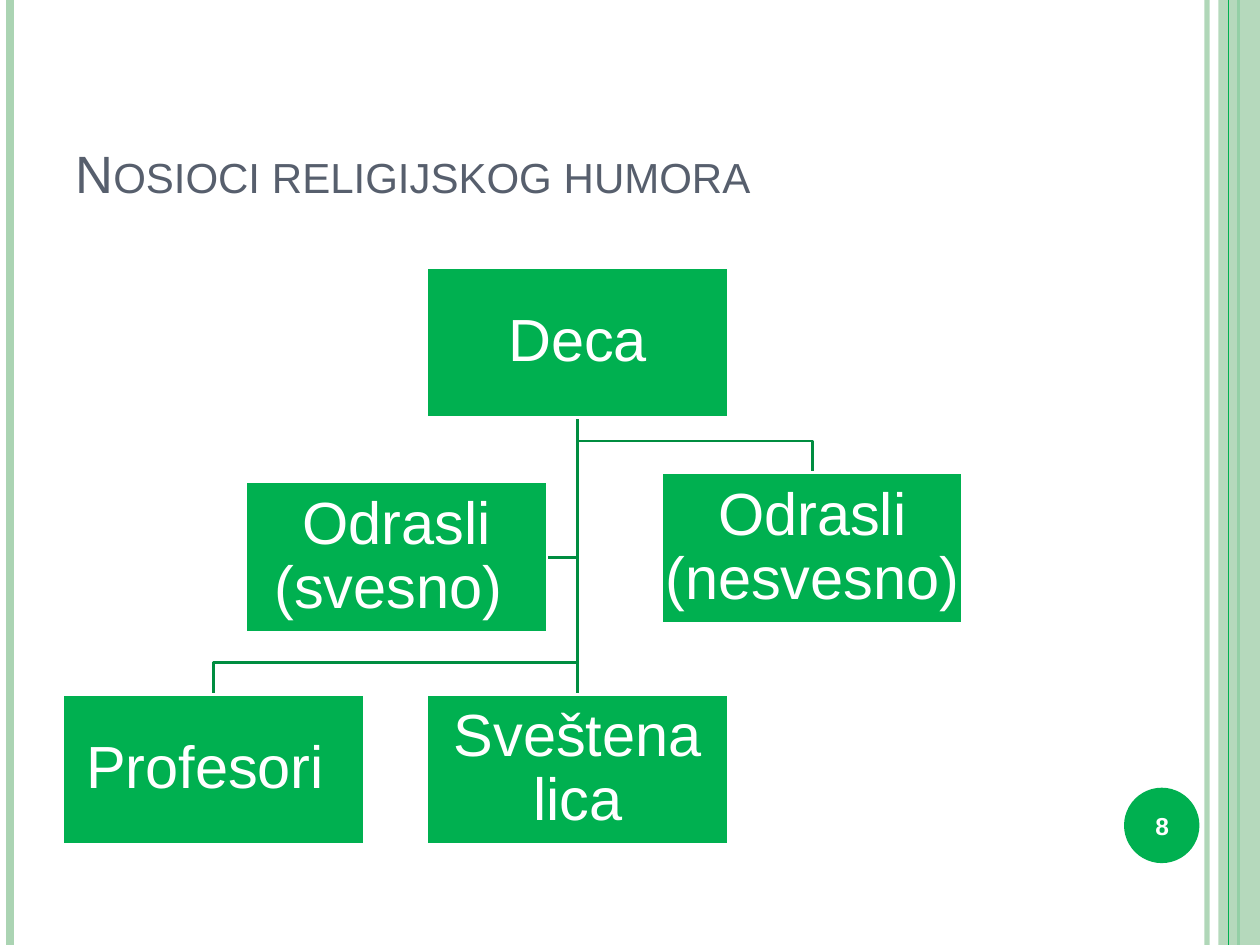
from lxml import etree
from pptx import Presentation
from pptx.dml.color import RGBColor
from pptx.enum.shapes import MSO_CONNECTOR, MSO_SHAPE
from pptx.enum.text import MSO_ANCHOR, PP_ALIGN
from pptx.oxml.ns import qn
from pptx.util import Cm, Pt

RECT, OVAL = MSO_SHAPE.RECTANGLE, MSO_SHAPE.OVAL
LINE = MSO_CONNECTOR.STRAIGHT
MID, LOW = MSO_ANCHOR.MIDDLE, MSO_ANCHOR.BOTTOM
LEFT, CENTER = PP_ALIGN.LEFT, PP_ALIGN.CENTER
HUES = {"green": "00B050", "dark": "008D40", "pale": "ABD4B3",
        "slate": "575F6D", "white": "FFFFFF"}
FONT = "Arial"
WIDE, HIGH = 25.4, 19.05


def hue(name):
    return RGBColor.from_string(HUES[name])


def fade(fill, part):
    tone = fill.find(".//" + qn("a:srgbClr"))
    etree.SubElement(tone, qn("a:alpha")).set("val", str(part * 1000))


def add_line(slide, start, end, color, width):
    line = slide.shapes.add_connector(LINE, *map(Cm, start + end))
    line.line.color.rgb = hue(color)
    line.line.width = Pt(width)
    etree.SubElement(line._element.spPr, qn("a:effectLst"))
    return line


def add_shape(slide, kind, box, color):
    shape = slide.shapes.add_shape(kind, *map(Cm, box))
    shape.shadow.inherit = False
    shape.fill.solid()
    shape.fill.fore_color.rgb = hue(color)
    shape.line.fill.background()
    return shape


def write(shape, text, size, color, align, anchor, pad=(0.25, 0.13)):
    frame = shape.text_frame
    frame.word_wrap = True
    frame.vertical_anchor = anchor
    frame.margin_left = frame.margin_right = Cm(pad[0])
    frame.margin_top = frame.margin_bottom = Cm(pad[1])
    para = frame.paragraphs[0]
    para.alignment = align
    for i, part in enumerate(text.split("\n")):
        if i:
            para.add_line_break()
        run = para.add_run()
        run.text = part
        run.font.name = FONT
        run.font.size = Pt(size)
        run.font.color.rgb = hue(color)
    return para


def draw_frame(slide, box):
    left, top, width, height = box
    rules = [(24.33, "pale", 3), (0.2, "pale", 4.5), (24.97, "green", 1.5)]
    for x, color, size in rules:
        rule = add_line(slide, (left + x, top), (left + x, top + height),
                        color, size)
        if size == 3:
            fade(rule._element.spPr, 93)
    band = add_shape(slide, RECT, (left + 24.56, top, width - 24.56, height),
                     "pale")
    fade(band._element.spPr, 87)
    add_line(slide, (left + 24.77, top), (left + 24.77, top + height),
             "green", 0.75)


def draw_title(slide, box):
    title = slide.shapes.add_textbox(*map(Cm, box))
    para = write(title, "Nosioci religijskog humora", 30, "slate", LEFT, LOW)
    para.runs[0]._r.get_or_add_rPr().set("cap", "small")


def draw_elbow(slide, points):
    first, *rest = [(Cm(x), Cm(y)) for x, y in points]
    path = slide.shapes.build_freeform(*first)
    path.add_line_segments(rest, close=False)
    elbow = path.convert_to_shape()
    elbow.shadow.inherit = False
    elbow.fill.background()
    elbow.line.color.rgb = hue("dark")
    elbow.line.width = Pt(1.5)


def draw_tree(slide, box):
    left, top, width, height = box
    wide, tall, gap = 6.07, 3.03, 1.27
    mid = left + wide + gap
    low = top + height - tall
    stem, foot = mid + wide / 2, top + tall
    side = left + width - wide
    lift = 0.64
    nodes = [
        ("Deca", mid, top),
        ("Profesori ", left, low),
        ("Sveštena lica", mid, low),
        ("Odrasli\n(nesvesno)", side, top + 4.14),
        ("Odrasli\n(svesno) ", left + 3.69, top + 4.33),
    ]

    arm = nodes[4][2] + tall / 2
    draw_elbow(slide, [(stem, foot), (stem, arm), (nodes[4][1] + wide, arm)])
    for text, x, y in (nodes[3], nodes[1]):
        end = x + wide / 2
        draw_elbow(slide, [(stem, foot), (stem, y - lift),
                           (end, y - lift), (end, y)])
    trunk = add_line(slide, (stem, foot), (stem, low), "dark", 1.5)

    cards = []
    for text, x, y in nodes:
        card = add_shape(slide, RECT, (x, y, wide, tall), "green")
        card.line.color.rgb = hue("white")
        card.line.width = Pt(1.5)
        para = write(card, text, 34, "white", CENTER, MID, (0.06, 0.06))
        para.line_spacing = 0.9
        cards.append(card)
    trunk.begin_connect(cards[0], 2)
    trunk.end_connect(cards[2], 0)


def draw_badge(slide, box):
    left, top, size, _ = box
    add_shape(slide, OVAL, box, "green")
    label = slide.shapes.add_textbox(Cm(left - 0.08), Cm(top + 0.05),
                                     Cm(size + 0.18), Cm(1.45))
    para = write(label, "8", 14, "white", CENTER, MID)
    para.runs[0].font.bold = True


def main():
    deck = Presentation()
    deck.slide_width, deck.slide_height = Cm(WIDE), Cm(HIGH)
    slide = deck.slides.add_slide(deck.slide_layouts[6])
    draw_frame(slide, (0, 0, WIDE, HIGH))
    draw_title(slide, (1.27, 1.07, 20.75, 3.18))
    draw_tree(slide, (1.27, 5.39, 18.14, 11.64))
    draw_badge(slide, (22.66, 15.88, 1.52, 1.52))
    deck.save("out.pptx")


if __name__ == "__main__":
    main()
